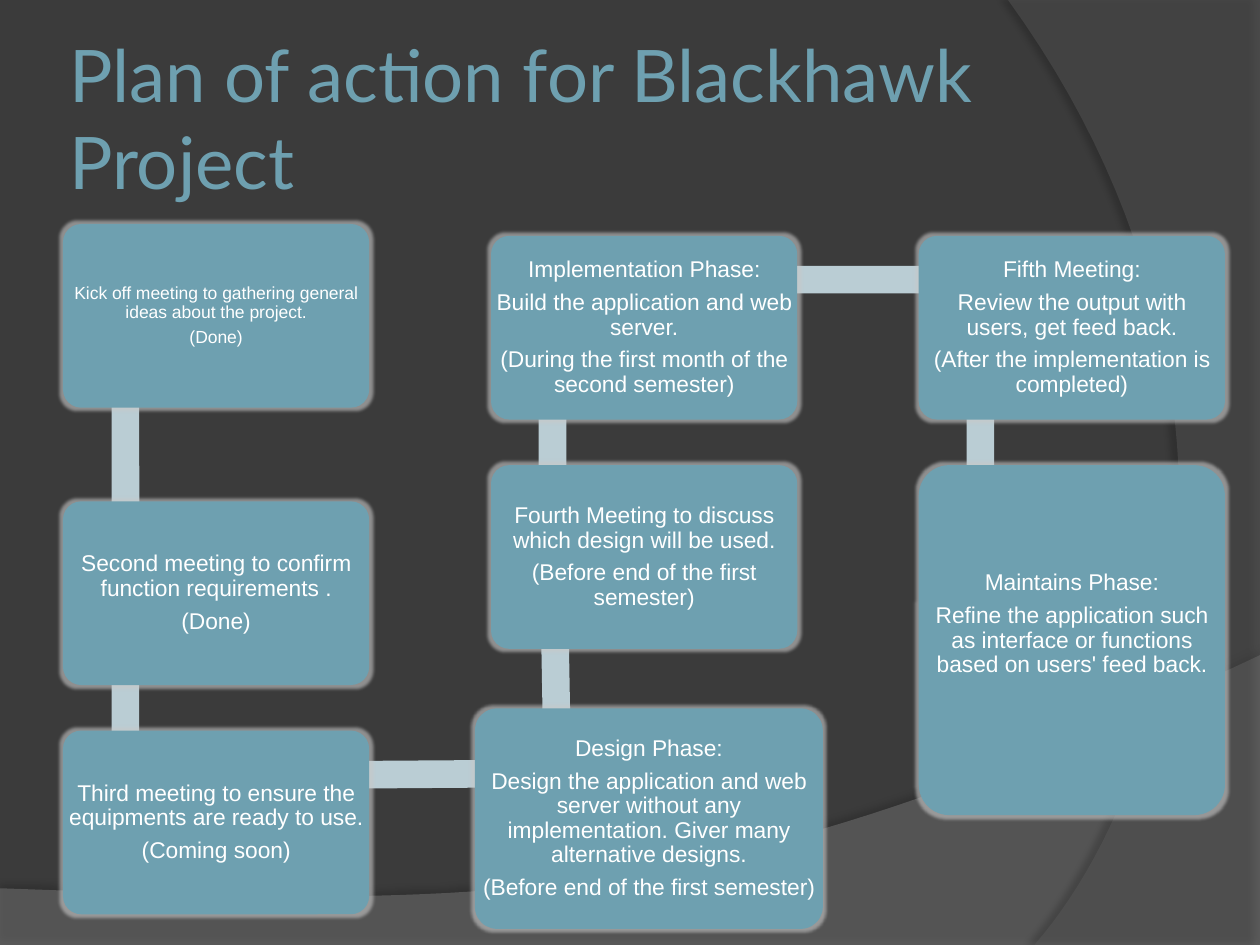
import pptx
import pptx.util
import pptx.dml.color
import pptx.enum.shapes
import pptx.enum.text
import pptx.oxml
import pptx.oxml.ns

Pt = pptx.util.Pt
RGB = pptx.dml.color.RGBColor
KIND = pptx.enum.shapes.MSO_SHAPE
ALIGN = pptx.enum.text.PP_ALIGN
MID = pptx.enum.text.MSO_ANCHOR.MIDDLE

DARK = RGB(0x3B, 0x3B, 0x3B)
TEAL = RGB(0x6E, 0xA0, 0xB0)
PALE = RGB(0xBA, 0xCD, 0xD4)
WHITE = RGB(0xFF, 0xFF, 0xFF)
GREY = RGB(0x7F, 0x7F, 0x7F)
SLATE = RGB(0x5E, 0x5E, 0x5E)
BLACK = RGB(0, 0, 0)
HALO = RGB(0xC8, 0xC8, 0xC8)

LEFT, CENTRE, RIGHT = 36, 280.6, 525
WIDE, HIGH = 175, 105
TOP, STEP = 134.8, 131
THICK = 15.8

CARDS = [
    (LEFT, 128, WIDE, HIGH, 10, 0,
     ["Kick off meeting to gathering general ideas about the project.",
      "(Done)"]),
    (LEFT, 286.5, WIDE, HIGH, 13, 0,
     ["Second meeting to confirm function requirements .", "(Done)"]),
    (LEFT, 286.5 + STEP, WIDE, HIGH, 13, 0,
     ["Third meeting to ensure the equipments are ready to use.",
      "(Coming soon)"]),
    (271.4, 404.8, 198.8, 126, 13, 0,
     ["Design Phase:",
      "Design the application and web server without any implementation. "
      "Giver many alternative designs.",
      "(Before end of the first semester)"]),
    (CENTRE, TOP + STEP, WIDE, HIGH, 13, 0,
     ["Fourth Meeting to discuss which design will be used.",
      "(Before end of the first semester)"]),
    (CENTRE, TOP, WIDE, HIGH, 13, 0,
     ["Implementation Phase:",
      "Build the application and web server.",
      "(During the first month of the second semester)"]),
    (RIGHT, TOP, WIDE, HIGH, 13, 0,
     ["Fifth Meeting:",
      "Review the output with users, get feed back.",
      "(After the implementation is completed)"]),
    (RIGHT, TOP + STEP, WIDE, 200, 13, 18,
     ["Maintains Phase:",
      "Refine the application such as interface or functions based on "
      "users' feed back."]),
]

BARS = [
    (71.6, 233.3, 157.7, 89.9),
    (71.6, 378, 130.3, 90),
    (195.5, 442.8, 247, 359.6),
    (317.2, 365.8, 149, 269),
    (315.7, 225.4, 130.3, 270),
    (437.8, 159.8, 243.4, 0),
    (560.2, 249.1, 177.1, 90),
]

WAVES = [
    ([(0, 540), (720, 540)],
     [(720, 374.4), (402.5, 524.9), (281.5, 517.7), (0, 507.6)],
     GREY, 45, (35, 4, 3.5, 270)),
    ([(720, 0), (720, 540)],
     [(591.1, 540), (673.2, 445.7), (733, 216), (576, 0)],
     SLATE, 40, (45, 4, 4, 180)),
]


def style(item, looks):
    for name, value in looks.items():
        setattr(item, name, value)


def paint(shape, tint):
    shape.shadow.inherit = False
    shape.fill.solid()
    shape.fill.fore_color.rgb = tint
    shape.line.fill.background()


def node(tag, tint, alpha, **extra):
    attrs = " ".join(f'{key}="{value}"' for key, value in extra.items())
    space = pptx.oxml.ns.nsdecls("a")
    return pptx.oxml.parse_xml(
        f'<a:{tag} {space} {attrs}><a:srgbClr val="{tint}">'
        f'<a:alpha val="{alpha * 1000}"/></a:srgbClr></a:{tag}>')


def effects(shape):
    return shape._element.spPr.find(pptx.oxml.ns.qn("a:effectLst"))


def curve(ends, count=48):
    a, b, c, d = ends
    for i in range(count + 1):
        t = i / count
        s = 1 - t
        yield tuple(s ** 3 * p + 3 * s * s * t * q + 3 * s * t * t * r + t ** 3 * e
                    for p, q, r, e in zip(a, b, c, d))


def add_wave(slide, place, edge, bend, tint, alpha, shade):
    dots = [(Pt(x), Pt(y)) for x, y in edge + list(curve(bend))]
    pen = slide.shapes.build_freeform(*dots[0], scale=1.0)
    pen.add_line_segments(dots[1:], close=True)
    wave = pen.convert_to_shape()
    paint(wave, tint)
    fill = wave._element.spPr.find(pptx.oxml.ns.qn("a:solidFill"))
    fill.getparent().replace(fill, node("solidFill", tint, alpha))
    dim, blur, dist, turn = shade
    effects(wave).append(node("outerShdw", BLACK, dim, blurRad=Pt(blur),
                              dist=Pt(dist), dir=turn * 60000))
    slide.shapes._spTree.insert(place, wave._element)


def add_title(slide, words):
    title = slide.shapes.title
    style(title, {"left": Pt(36), "top": Pt(21.6),
                  "width": Pt(588), "height": Pt(90)})
    frame = title.text_frame
    frame.text = words
    style(frame, {"vertical_anchor": MID, "word_wrap": True,
                  "margin_left": Pt(3.6), "margin_right": Pt(3.6),
                  "margin_top": Pt(3.6), "margin_bottom": Pt(3.6)})
    line = frame.paragraphs[0]
    line.alignment = ALIGN.LEFT
    style(line.runs[0].font, {"name": "Lato", "size": Pt(41.4)})
    line.runs[0].font.color.rgb = TEAL


def add_bar(slide, x, y, length, turn):
    bar = slide.shapes.add_shape(
        KIND.RECTANGLE, Pt(x - length / 2), Pt(y - THICK / 2),
        Pt(length), Pt(THICK))
    paint(bar, PALE)
    bar.rotation = turn


def add_card(slide, x, y, wide, high, size, lift, lines):
    card = slide.shapes.add_shape(
        KIND.ROUNDED_RECTANGLE, Pt(x), Pt(y), Pt(wide), Pt(high))
    card.adjustments[0] = 0.1
    paint(card, TEAL)
    effects(card).append(node("glow", HALO, 60, rad=Pt(3.5)))
    frame = card.text_frame
    style(frame, {"vertical_anchor": MID, "word_wrap": True,
                  "margin_left": 0, "margin_right": 0,
                  "margin_top": 0, "margin_bottom": Pt(lift)})
    for i, words in enumerate(lines):
        line = frame.add_paragraph() if i else frame.paragraphs[0]
        style(line, {"text": words, "alignment": ALIGN.CENTER,
                     "line_spacing": 0.9, "space_after": Pt(size * 0.35)})
        font = line.runs[0].font
        style(font, {"name": "Arial", "size": Pt(size)})
        font.color.rgb = WHITE


def main():
    deck = pptx.Presentation()
    style(deck, {"slide_width": Pt(720), "slide_height": Pt(540)})
    slide = deck.slides.add_slide(deck.slide_layouts[5])
    slide.background.fill.solid()
    slide.background.fill.fore_color.rgb = DARK
    for place, wave in enumerate(WAVES, 2):
        add_wave(slide, place, *wave)
    add_title(slide, "Plan of action for Blackhawk Project")
    for bar in BARS:
        add_bar(slide, *bar)
    for card in CARDS:
        add_card(slide, *card)
    deck.save("out.pptx")


if __name__ == "__main__":
    main()
